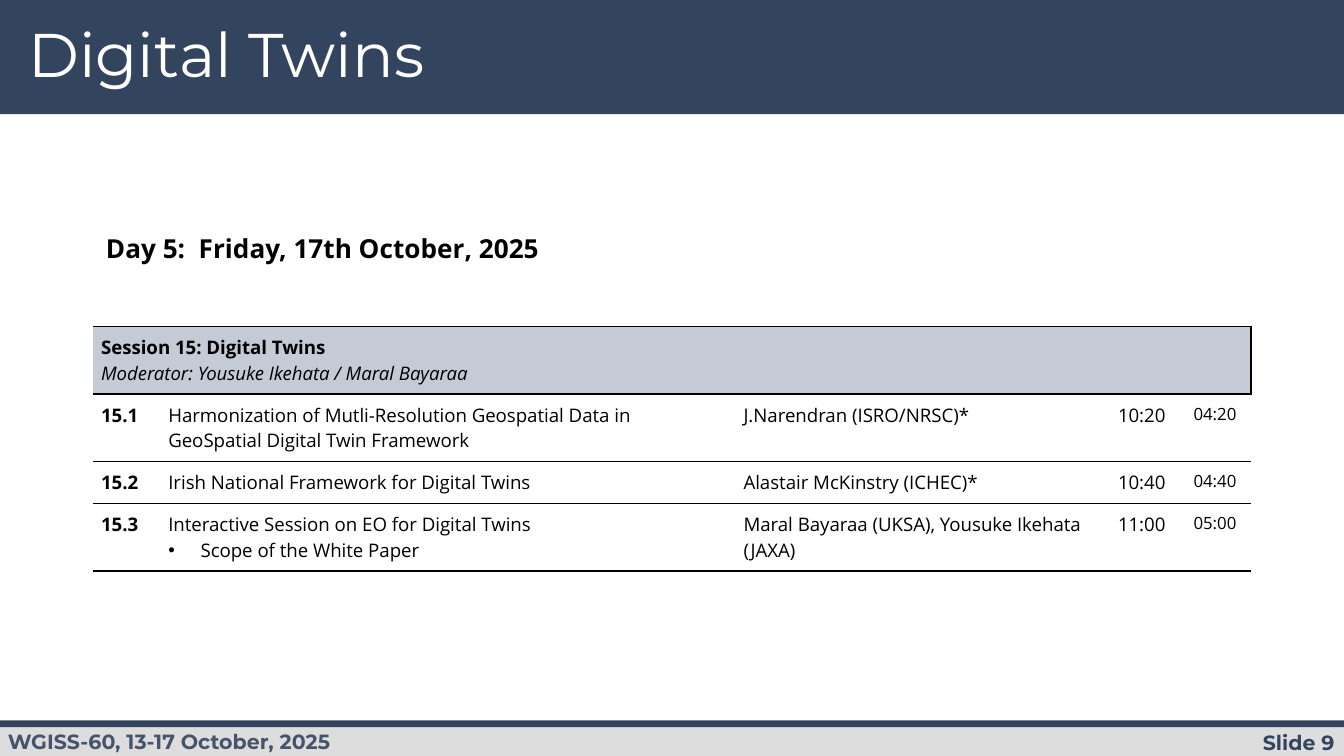
"""Build the Digital Twins agenda slide."""
from dataclasses import dataclass

from lxml.etree import SubElement
from pptx import Presentation
from pptx.dml.color import RGBColor
from pptx.enum.shapes import MSO_SHAPE
from pptx.enum.text import MSO_ANCHOR, MSO_AUTO_SIZE, PP_ALIGN
from pptx.oxml.ns import qn
from pptx.util import Inches, Pt


@dataclass(frozen=True)
class Theme:
    navy: str = "33445F"
    slate: str = "44546A"
    grey: str = "DDDDDD"
    header: str = "C4CBD7"
    black: str = "000000"
    white: str = "FFFFFF"
    heading_font: str = "Montserrat"
    body_font: str = "Open Sans"
    title_size: int = 33
    day_size: int = 14
    footer_size: int = 11
    table_size: int = 10
    small_size: int = 9


THEME = Theme()
TITLE = "Digital Twins"
DAY = "Day 5:  Friday, 17th October, 2025"
MEETING = "WGISS-60, 13-17 October, 2025"
SLIDE_LABEL = "Slide 9"
SESSION = "Session 15: Digital Twins"
MODERATOR = "Moderator: Yousuke Ikehata / Maral Bayaraa"
TALKS = [
    ("15.1 ", ["Harmonization of Mutli-Resolution Geospatial Data in GeoSpatial Digital Twin Framework"],
     "J.Narendran (ISRO/NRSC)*", "10:20", "04:20"),
    ("15.2", ["Irish National Framework for Digital Twins "],
     "Alastair McKinstry (ICHEC)*", "10:40", "04:40"),
    ("15.3", ["Interactive Session on EO for Digital Twins", "Scope of the White Paper"],
     "Maral Bayaraa (UKSA), Yousuke Ikehata (JAXA)", "11:00", "05:00"),
]
SLIDE_WIDTH = 10
SLIDE_HEIGHT = SLIDE_WIDTH * 9 / 16
BANDS = [
    ((0, 0, SLIDE_WIDTH, 0.85), THEME.navy),
    ((0, 5.39, SLIDE_WIDTH, SLIDE_HEIGHT - 5.39), THEME.grey),
    ((0, 5.36, SLIDE_WIDTH, 0.05), THEME.navy),
]
COLUMN_WIDTHS = [0.5, 4.28, 2.75, 0.55, 0.54]
ROW_HEIGHTS = [0.47, 0.47, 0.3, 0.47]
CELL_MARGIN = 1 / 16
BULLET_INDENT = 0.24


def add_run(paragraph, text, size, font=THEME.body_font, color=THEME.black, bold=False, italic=False):
    run = paragraph.add_run()
    run.text = text
    run.font.name = font
    run.font.size = Pt(size)
    run.font.bold = bold
    run.font.italic = italic
    run.font.color.rgb = RGBColor.from_string(color)


def set_margins(frame, horizontal, vertical):
    frame.margin_left = frame.margin_right = Inches(horizontal)
    frame.margin_top = frame.margin_bottom = Inches(vertical)


def add_band(slide, box, color):
    shape = slide.shapes.add_shape(MSO_SHAPE.RECTANGLE, *map(Inches, box))
    shape.shadow.inherit = False
    shape.fill.solid()
    shape.fill.fore_color.rgb = RGBColor.from_string(color)
    shape.line.fill.background()


def add_label(slide, box, margins, text, size, align=PP_ALIGN.LEFT, **style):
    frame = slide.shapes.add_textbox(*map(Inches, box)).text_frame
    frame.word_wrap = True
    set_margins(frame, *margins)
    paragraph = frame.paragraphs[0]
    paragraph.alignment = align
    add_run(paragraph, text, size, bold=True, **style)


def add_title(slide):
    title = slide.shapes.title
    slide.shapes._spTree.append(title._element)
    title.left, title.top, title.width, title.height = map(Inches, (0.14, 0.14, 7.7, 0.64))
    frame = title.text_frame
    frame.auto_size = MSO_AUTO_SIZE.NONE
    frame.vertical_anchor = MSO_ANCHOR.TOP
    set_margins(frame, 0.07, 0.04)
    paragraph = frame.paragraphs[0]
    paragraph.alignment = PP_ALIGN.LEFT
    paragraph.line_spacing = 0.9
    add_run(paragraph, TITLE, THEME.title_size, THEME.heading_font, THEME.white)


def set_borders(cell, left=0, right=0, top=0.75, bottom=0.75):
    properties = cell._tc.get_or_add_tcPr()
    for side, width in (("L", left), ("R", right), ("T", top), ("B", bottom)):
        line = SubElement(properties, qn(f"a:ln{side}"), w=str(Pt(width)))
        if width:
            fill = SubElement(line, qn("a:solidFill"))
            SubElement(fill, qn("a:srgbClr"), val=THEME.black)
        else:
            SubElement(line, qn("a:noFill"))


def add_bullet(paragraph):
    properties = paragraph._p.get_or_add_pPr()
    properties.set("marL", str(Inches(BULLET_INDENT)))
    properties.set("indent", str(-Inches(BULLET_INDENT)))
    color = SubElement(properties, qn("a:buClr"))
    SubElement(color, qn("a:srgbClr"), val=THEME.black)
    SubElement(properties, qn("a:buFont"), typeface="Arial")
    SubElement(properties, qn("a:buChar"), char="•")


def fill_header(table):
    last = len(COLUMN_WIDTHS) - 1
    for column in range(last + 1):
        cell = table.cell(0, column)
        set_borders(cell, right=1 if column in (0, last) else 0, top=1)
        cell.fill.solid()
        cell.fill.fore_color.rgb = RGBColor.from_string(THEME.header)
    header = table.cell(0, 0)
    header.merge(table.cell(0, last))
    header.vertical_anchor = MSO_ANCHOR.MIDDLE
    set_margins(header, CELL_MARGIN, CELL_MARGIN)
    frame = header.text_frame
    add_run(frame.paragraphs[0], SESSION, THEME.table_size, bold=True)
    add_run(frame.add_paragraph(), MODERATOR, THEME.table_size, italic=True)


def fill_talk(table, row, talk):
    for column, content in enumerate(talk):
        is_last = column == len(talk) - 1
        cell = table.cell(row, column)
        border = 1 if is_last else 0.75
        set_borders(cell, top=border, bottom=border)
        cell.fill.background()
        set_margins(cell, CELL_MARGIN, CELL_MARGIN)
        frame = cell.text_frame
        lines = content if isinstance(content, list) else [content]
        for index, text in enumerate(lines):
            paragraph = frame.add_paragraph() if index else frame.paragraphs[0]
            if index:
                add_bullet(paragraph)
            paragraph.alignment = PP_ALIGN.CENTER if column >= 3 else PP_ALIGN.LEFT
            size = THEME.small_size if is_last else THEME.table_size
            add_run(paragraph, text, size, bold=column == 0)


def add_agenda(slide):
    box = (0.69, 2.43, sum(COLUMN_WIDTHS), sum(ROW_HEIGHTS))
    table = slide.shapes.add_table(len(ROW_HEIGHTS), len(COLUMN_WIDTHS), *map(Inches, box)).table
    table.first_row = table.horz_banding = False
    for column, width in zip(table.columns, COLUMN_WIDTHS):
        column.width = Inches(width)
    for row, height in zip(table.rows, ROW_HEIGHTS):
        row.height = Inches(height)
    fill_header(table)
    for row, talk in enumerate(TALKS, start=1):
        fill_talk(table, row, talk)


def main():
    presentation = Presentation()
    presentation.slide_width = Inches(SLIDE_WIDTH)
    presentation.slide_height = Inches(SLIDE_HEIGHT)
    slide = presentation.slides.add_slide(presentation.slide_layouts[5])
    for box, color in BANDS:
        add_band(slide, box, color)
    add_label(slide, (8.42, 5.39, 1.58, 0.26), (0.07, 0.04), SLIDE_LABEL, THEME.footer_size,
              PP_ALIGN.RIGHT, font=THEME.heading_font, color=THEME.navy)
    add_label(slide, (-0.04, 5.33, 3.16, 0.39), (0.1, 0.1), MEETING, THEME.footer_size,
              font=THEME.heading_font, color=THEME.slate)
    add_title(slide)
    add_agenda(slide)
    add_label(slide, (0.69, 1.68, 5.04, 0.34), (0.1, 0.05), DAY, THEME.day_size)
    presentation.save("out.pptx")


if __name__ == "__main__":
    main()
